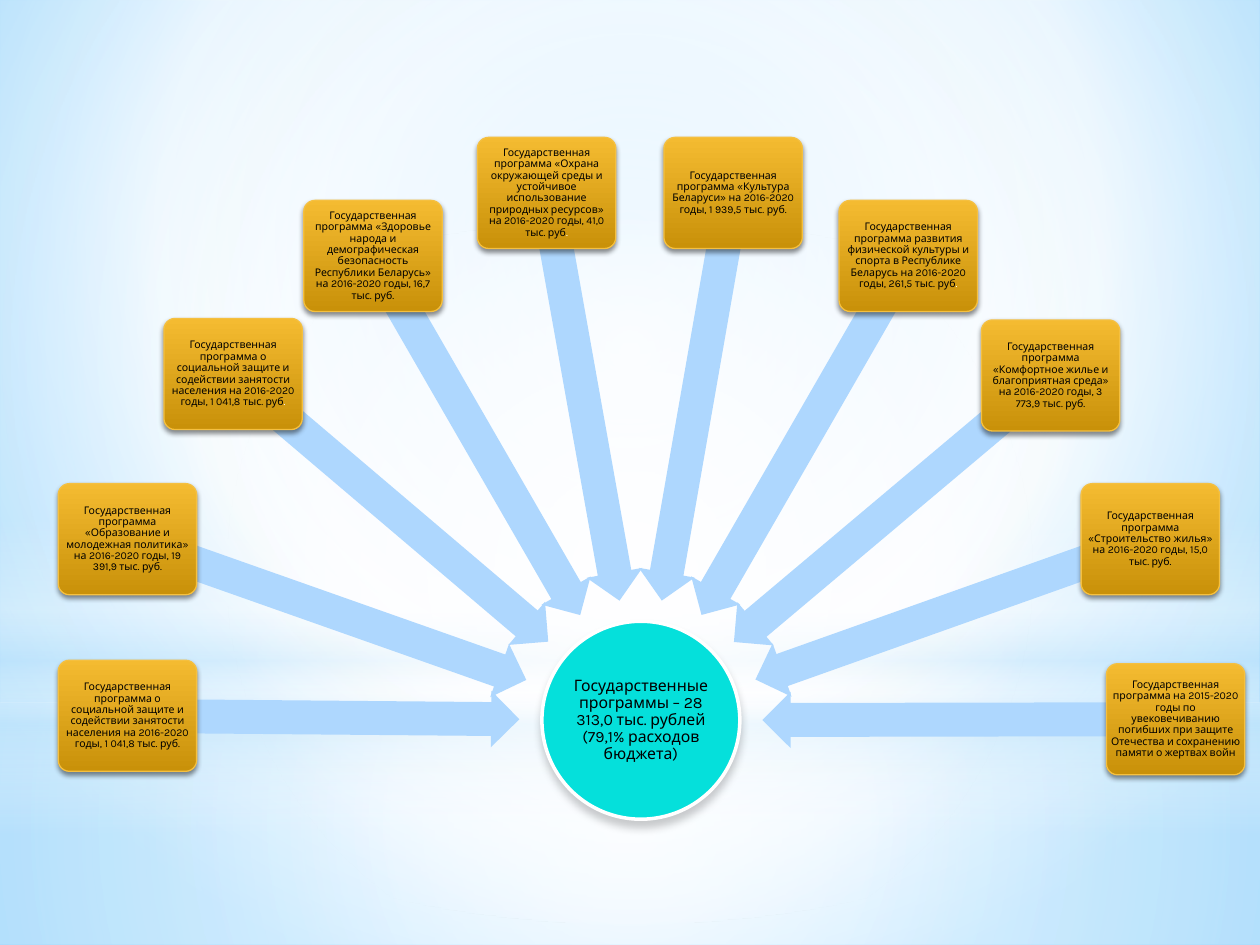
import math
from dataclasses import dataclass

from lxml import etree
from pptx import Presentation
from pptx import util as u
from pptx.dml.color import RGBColor
from pptx.enum import shapes, text
from pptx.oxml import ns


@dataclass(frozen=True)
class Theme:
    font: str = "Karla"
    hub_size: int = 9
    box_size: int = 6
    ink: str = "000000"
    white: str = "FFFFFF"
    sky: str = "B0E0FF"
    deep_sky: str = "6BC5FF"
    mist: str = "C6E7FC"
    hub: str = "05E0DB"
    arrow: str = "AED7FE"
    gold: str = "F4BB31"
    dark_gold: str = "C99109"
    gold_edge: str = "F5C040"


theme = Theme()
kinds = shapes.MSO_SHAPE


def set_gradient(fill, parent, stops, focus=None):
    fill.solid()
    solid = parent.find(ns.qn("a:solidFill"))
    gradient = etree.Element(ns.qn("a:gradFill"), rotWithShape="1")
    stop_list = etree.SubElement(gradient, ns.qn("a:gsLst"))
    for position, color, alpha in stops:
        stop = etree.SubElement(stop_list, ns.qn("a:gs"), pos=str(position * 1000))
        tint = etree.SubElement(stop, ns.qn("a:srgbClr"), val=color)
        if alpha < 100:
            etree.SubElement(tint, ns.qn("a:alpha"), val=str(alpha * 1000))
    if focus:
        route = etree.SubElement(gradient, ns.qn("a:path"), path="circle")
        sides = {side: str(value * 1000) for side, value in zip("ltrb", focus)}
        etree.SubElement(route, ns.qn("a:fillToRect"), **sides)
    else:
        etree.SubElement(gradient, ns.qn("a:lin"), ang="5400000", scaled="0")
    parent.replace(solid, gradient)


def add_node(kind, x, y, width, height, words, size, edge, edge_width, shadow):
    node = page.shapes.add_shape(
        kind, u.Cm(x - width / 2), u.Cm(y - height / 2), u.Cm(width), u.Cm(height))
    node.line.color.rgb = RGBColor.from_string(edge)
    node.line.width = u.Pt(edge_width)
    node.shadow.inherit = False
    alpha, blur, distance = shadow
    effects = node.element.spPr.find(ns.qn("a:effectLst"))
    outer = etree.SubElement(
        effects, ns.qn("a:outerShdw"), blurRad=str(u.Pt(blur)), dist=str(u.Pt(distance)),
        dir="5400000", rotWithShape="0")
    shade = etree.SubElement(outer, ns.qn("a:srgbClr"), val=theme.ink)
    etree.SubElement(shade, ns.qn("a:alpha"), val=str(alpha * 1000))
    frame = node.text_frame
    frame.text = words
    frame.word_wrap = True
    frame.vertical_anchor = text.MSO_ANCHOR.MIDDLE
    frame.margin_left = frame.margin_right = u.Cm(0.03)
    frame.margin_top = frame.margin_bottom = u.Cm(0.03)
    para = frame.paragraphs[0]
    para.alignment = text.PP_ALIGN.CENTER
    para.line_spacing = 0.9
    if words.endswith("руб"):
        para.add_run().text = "."
    for span, color in zip(para.runs, (theme.ink, theme.white)):
        span.font.name = theme.font
        span.font.size = u.Pt(size)
        span.font.color.rgb = RGBColor.from_string(color)
    return node


deck = Presentation()
deck.slide_width, deck.slide_height = u.Cm(25.4), u.Cm(19.05)
page = deck.slides.add_slide(deck.slide_layouts[6])

backdrop = page.background.fill
backdrop.solid()
set_gradient(
    backdrop, page.element.find(".//" + ns.qn("p:bgPr")),
    [(0, theme.sky, 100), (60, theme.white, 100), (100, theme.deep_sky, 100)],
    (20, 10, 20, 60))

centre = (50, 50, 50, 50)
layers = [
    (kinds.RECTANGLE, 14.17, 4.88, centre,
     [(0, theme.white, 91), (37, theme.white, 76), (100, theme.mist, 79)]),
    (kinds.RECTANGLE, 0, 14.17, centre,
     [(0, theme.white, 89), (48, theme.white, 62), (100, theme.mist, 79)]),
    (kinds.RECTANGLE, 10.46, 6.35, None,
     [(0, theme.white, 0), (29, theme.white, 30), (45, theme.mist, 40),
      (55, theme.white, 26), (65, theme.mist, 60), (100, theme.white, 0)]),
    (kinds.OVAL, 4.45, 14.17, centre,
     [(0, theme.white, 100), (56, theme.white, 0)]),
]
for kind, top, height, focus, stops in layers:
    layer = page.shapes.add_shape(kind, 0, u.Cm(top), deck.slide_width, u.Cm(height))
    layer.shadow.inherit = False
    layer.line.fill.background()
    set_gradient(layer.fill, layer.element.spPr, stops, focus)

hub_x, hub_y, hub_diameter = 12.92, 14.52, 3.99
tip_radius, arrow_height = 2.45, 1.14
box_width, box_height = 2.79, 2.24

hub = add_node(
    kinds.OVAL, hub_x, hub_y, hub_diameter, hub_diameter,
    "Государственные программы – 28 313,0 тыс. рублей (79,1% расходов бюджета)",
    theme.hub_size, theme.white, 2, (20, 5, 4))
hub.fill.solid()
hub.fill.fore_color.rgb = RGBColor.from_string(theme.hub)

programs = [
    (2.57, 14.43, "Государственная программа о социальной защите и содействии занятости "
     "населения на 2016-2020 годы, 1 041,8 тыс. руб."),
    (2.57, 10.87, "Государственная программа «Образование и молодежная политика» "
     "на 2016-2020 годы, 19 391,9 тыс. руб."),
    (4.7, 7.54, "Государственная программа о социальной защите и содействии занятости "
     "населения на 2016-2020 годы, 1 041,8 тыс. руб"),
    (7.52, 5.16, "Государственная программа «Здоровье народа и демографическая безопасность "
     "Республики Беларусь» на 2016-2020 годы, 16,7 тыс. руб."),
    (11.02, 3.89, "Государственная программа «Охрана окружающей среды и устойчивое "
     "использование природных ресурсов» на 2016-2020 годы, 41,0 тыс. руб"),
    (14.78, 3.89, "Государственная программа «Культура Беларуси» на 2016-2020 годы, "
     "1 939,5 тыс. руб."),
    (18.31, 5.16, "Государственная программа развития физической культуры и спорта "
     "в Республике Беларусь на 2016-2020 годы, 261,5 тыс. руб"),
    (21.18, 7.57, "Государственная программа «Комфортное жилье и благоприятная среда» "
     "на 2016-2020 годы, 3 773,9 тыс. руб."),
    (23.19, 10.87, "Государственная программа «Строительство жилья» на 2016-2020 годы, "
     "15,0 тыс. руб."),
    (23.7, 14.5, "Государственная программа на 2015-2020 годы по увековечиванию погибших "
     "при защите Отечества и сохранению памяти о жертвах войн"),
]
for x, y, words in programs:
    angle = math.atan2(y - hub_y, x - hub_x)
    reach = math.hypot(x - hub_x, y - hub_y)
    length = reach - tip_radius
    middle = (reach + tip_radius) / 2
    arrow = page.shapes.add_shape(
        kinds.LEFT_ARROW,
        u.Cm(hub_x + middle * math.cos(angle) - length / 2),
        u.Cm(hub_y + middle * math.sin(angle) - arrow_height / 2),
        u.Cm(length), u.Cm(arrow_height))
    arrow.adjustments[0] = 0.6
    arrow.adjustments[1] = 0.5
    arrow.rotation = math.degrees(angle) % 360
    arrow.shadow.inherit = False
    arrow.line.fill.background()
    arrow.fill.solid()
    arrow.fill.fore_color.rgb = RGBColor.from_string(theme.arrow)

    box = add_node(
        kinds.ROUNDED_RECTANGLE, x, y, box_width, box_height, words,
        theme.box_size, theme.gold_edge, 0.75, (45, 3.1, 1.8))
    box.adjustments[0] = 0.1
    set_gradient(box.fill, box.element.spPr,
                 [(0, theme.gold, 100), (100, theme.dark_gold, 100)])

deck.save("out.pptx")
